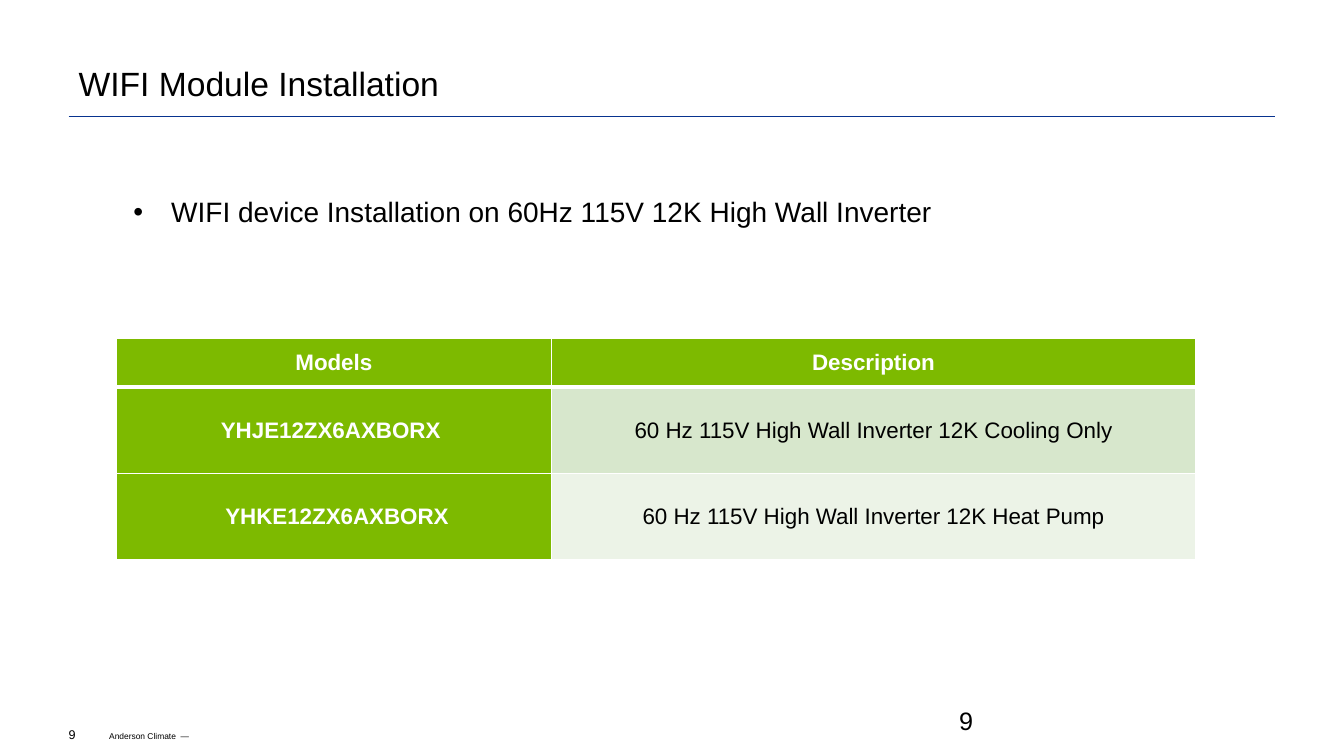
from dataclasses import dataclass

import pptx
import pptx.dml.color
import pptx.enum.shapes
import pptx.enum.text
import pptx.oxml
import pptx.oxml.ns
import pptx.util

Pt = pptx.util.Pt
Align = pptx.enum.text.PP_ALIGN
Anchor = pptx.enum.text.MSO_ANCHOR


@dataclass(frozen=True)
class Theme:
    font: str = "Arial"
    text: str = "000000"
    white: str = "FFFFFF"
    rule: str = "08338F"
    green: str = "7DBA00"
    bands: tuple = ("D7E7CC", "ECF3E7")
    title_size: float = 24
    list_size: float = 20
    page_size: float = 18
    table_size: float = 16
    number_size: float = 9
    footer_size: float = 6


THEME = Theme()
MODELS = [
    ("YHJE12ZX6AXBORX", "60 Hz 115V High Wall Inverter 12K Cooling Only"),
    ("YHKE12ZX6AXBORX", "60 Hz 115V High Wall Inverter 12K Heat Pump"),
]


def color(value):
    return pptx.dml.color.RGBColor.from_string(value)


def apply(target, formats):
    for name, value in formats.items():
        setattr(target, name, value)


def write(paragraph, text, size, ink=THEME.text, bold=False, align=Align.LEFT):
    paragraph.alignment = align
    run = paragraph.add_run()
    run.text = text
    apply(run.font, {"name": THEME.font, "size": Pt(size), "bold": bold})
    run.font.color.rgb = color(ink)


def place(shape, left, top, width, height):
    apply(shape, {"left": Pt(left), "top": Pt(top),
                  "width": Pt(width), "height": Pt(height)})


def set_frame(frame, anchor, margins):
    sides = ("margin_left", "margin_top", "margin_right", "margin_bottom")
    apply(frame, dict(zip(sides, map(Pt, margins))))
    apply(frame, {"word_wrap": True, "vertical_anchor": anchor,
                  "auto_size": pptx.enum.text.MSO_AUTO_SIZE.NONE})


def fill_title(shape, text):
    place(shape, 49, 15, 862, 63)
    set_frame(shape.text_frame, Anchor.BOTTOM, (7.2, 3.6, 7.2, 3.6))
    paragraph = shape.text_frame.paragraphs[0]
    paragraph.line_spacing = 0.9
    write(paragraph, text, THEME.title_size)


def fill_list(shape, items):
    place(shape, 94.3, 141, 748, 23)
    set_frame(shape.text_frame, Anchor.TOP, (0, 1, 0, 0))
    for index, item in enumerate(items):
        frame = shape.text_frame
        paragraph = frame.add_paragraph() if index else frame.paragraphs[0]
        properties = paragraph._p.get_or_add_pPr()
        properties.set("marL", str(Pt(28)))
        properties.set("indent", str(Pt(-27)))
        bullet = pptx.oxml.parse_xml(
            f'<a:buChar {pptx.oxml.ns.nsdecls("a")} char="•"/>')
        properties.append(bullet)
        apply(paragraph, {"line_spacing": 0.9, "space_before": Pt(0)})
        write(paragraph, item, THEME.list_size)


def add_text(slide, box, text, size, anchor=Anchor.MIDDLE, margins=(0, 0, 0, 0)):
    shape = slide.shapes.add_textbox(*map(Pt, box))
    set_frame(shape.text_frame, anchor, margins)
    write(shape.text_frame.paragraphs[0], text, size)


def add_rule(slide, left, right, top):
    line = slide.shapes.add_connector(
        pptx.enum.shapes.MSO_CONNECTOR.STRAIGHT,
        Pt(left), Pt(top), Pt(right), Pt(top))
    line.line.color.rgb = color(THEME.rule)
    line.line.width = Pt(0.75)
    line._element.spPr.append(pptx.oxml.parse_xml(
        f'<a:effectLst {pptx.oxml.ns.nsdecls("a")}/>'))


def add_borders(cell, top, bottom):
    properties = cell._tc.get_or_add_tcPr()
    for side, width in {"L": 1, "R": 1, "T": top, "B": bottom}.items():
        properties.append(pptx.oxml.parse_xml(
            f'<a:ln{side} {pptx.oxml.ns.nsdecls("a")} w="{Pt(width)}">'
            f'<a:solidFill><a:srgbClr val="{THEME.white}"/></a:solidFill>'
            f'</a:ln{side}>'))


def fill_cell(cell, text, row, column):
    strong = row == 0 or column == 0
    add_borders(cell, 3 if row == 1 else 1, 3 if row == 0 else 1)
    cell.fill.solid()
    cell.fill.fore_color.rgb = color(
        THEME.green if strong else THEME.bands[(row - 1) % 2])
    # The two model names sit slightly to either side of centre
    model = row > 0 and column == 0
    apply(cell, {
        "vertical_anchor": Anchor.MIDDLE,
        "margin_left": Pt(9.5 if model and row == 2 else 5),
        "margin_right": Pt(9.5 if model and row == 1 else 5),
        "margin_top": 0, "margin_bottom": 0})
    write(cell.text_frame.paragraphs[0], text, THEME.table_size,
          THEME.white if strong else THEME.text, strong, Align.CENTER)


def add_model_table(slide, left, top, widths, heights, rows):
    table = slide.shapes.add_table(
        len(rows), len(widths), Pt(left), Pt(top),
        Pt(sum(widths)), Pt(sum(heights))).table
    for column, width in zip(table.columns, widths):
        column.width = Pt(width)
    for row, height in zip(table.rows, heights):
        row.height = Pt(height)
    for row, texts in enumerate(rows):
        for column, text in enumerate(texts):
            fill_cell(table.cell(row, column), text, row, column)


def main():
    presentation = pptx.Presentation()
    apply(presentation, {"slide_width": Pt(960), "slide_height": Pt(540)})
    slide = presentation.slides.add_slide(presentation.slide_layouts[1])

    # Heading and list
    add_rule(slide, 49, 911, 83)
    fill_title(slide.shapes.title, "WIFI Module Installation")
    fill_list(slide.placeholders[1],
              ["WIFI device Installation on 60Hz 115V 12K High Wall Inverter"])

    # Models
    add_model_table(slide, 83, 242, (311, 460), (34.5, 61.75, 61.75),
                    [("Models", "Description"), *MODELS])

    # Footer and page numbers
    add_text(slide, (78, 522, 115, 7), "Anderson Climate  —", THEME.footer_size,
             Anchor.TOP)
    add_text(slide, (49, 516, 28, 17), "9", THEME.number_size)
    add_text(slide, (678, 500.5, 216, 29), "9", THEME.page_size,
             Anchor.TOP, (7.2, 3.6, 7.2, 3.6))

    presentation.save("out.pptx")


if __name__ == "__main__":
    main()
